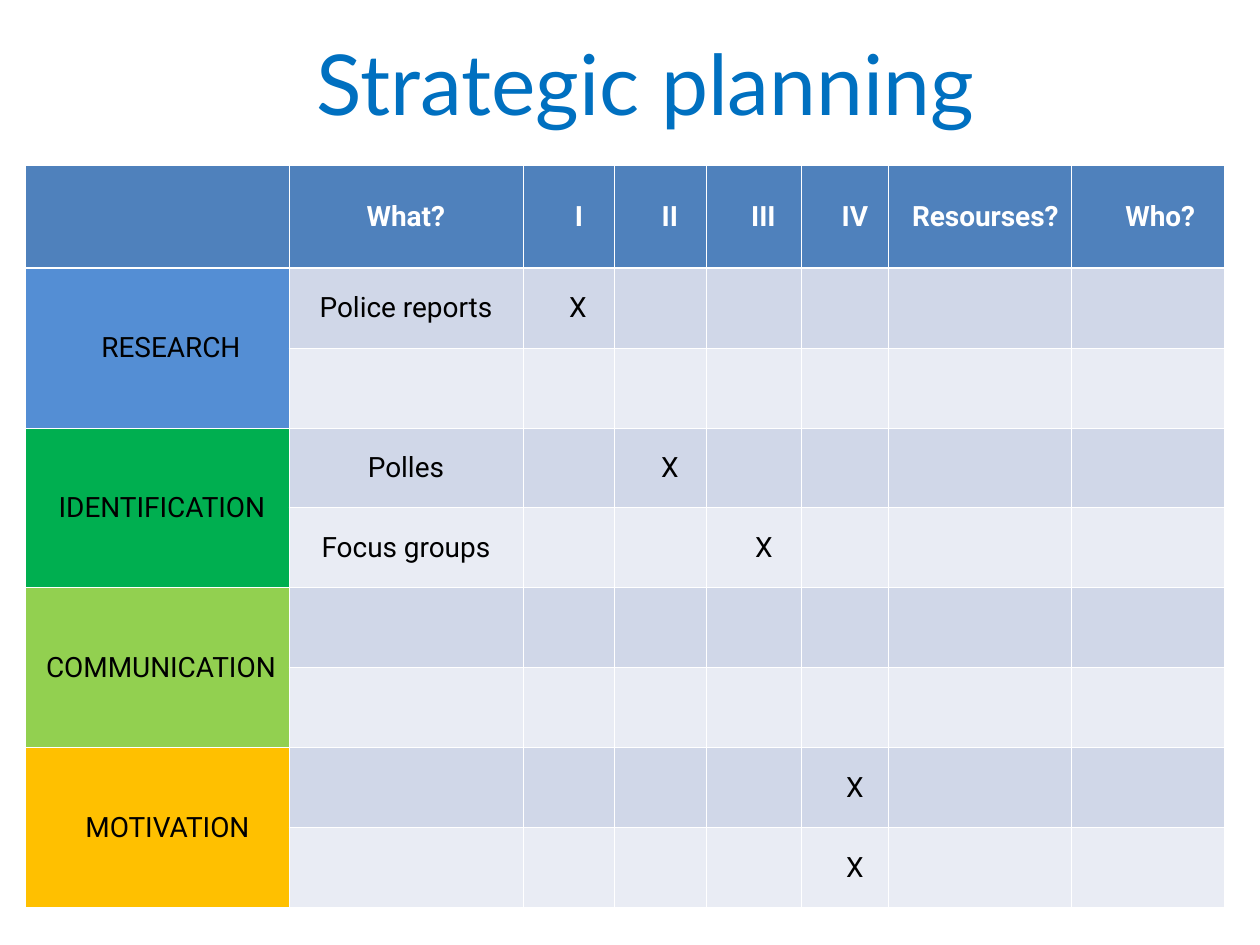
from lxml.etree import SubElement
from pptx import Presentation
from pptx.dml.color import RGBColor
from pptx.enum.text import MSO_ANCHOR as Anchor, PP_ALIGN as Align
from pptx.oxml.ns import qn
from pptx.util import Pt

EMU_PER_PX = 914400 / 126
COLORS = {
    "title": "0070C0", "header": "4F81BC", "white": "FFFFFF", "black": "000000",
    "band_dark": "D0D7E8", "band_light": "E9ECF4",
    "research": "548ED4", "identification": "00AF50",
    "communication": "92D050", "motivation": "FFC000",
}
COLUMN_WIDTHS = [264, 234, 91, 92, 95, 88, 183, 153]
HEADER_HEIGHT, ROW_HEIGHT = 103, 80
# Texts come with the left indent that shifts them from the cell's centre.
HEADERS = [("", 0), ("What?", 0), ("I", 21), ("II", 20), ("III", 20), ("IV", 20),
           ("Resourses?", 10), ("Who?", 24)]
PHASES = [("RESEARCH", 28), ("IDENTIFICATION", 10), ("COMMUNICATION", 8), ("MOTIVATION", 21)]
ENTRIES = {
    (1, 1): ("Police reports", 0), (1, 2): ("X", 19),
    (3, 1): ("Polles", 0), (3, 3): ("X", 20),
    (4, 1): ("Focus groups", 0), (4, 4): ("X", 21),
    (7, 5): ("X", 20), (8, 5): ("X", 20),
}


def px(length):
    return round(length * EMU_PER_PX)


def write_text(frame, text, font="Roboto", size=16, color="black", bold=False):
    para = frame.paragraphs[0]
    para.alignment = Align.CENTER
    span = para.add_run()
    span.text = text
    span.font.name = font
    span.font.size = Pt(size)
    span.font.bold = bold
    span.font.color.rgb = RGBColor.from_string(COLORS[color])


def add_title(page, text):
    box = page.shapes.add_textbox(px(164), px(25), px(963), px(115))
    box.text_frame.word_wrap = True
    write_text(box.text_frame, text, font="Lato", size=48, color="title")


def set_borders(cell, top=0.5, bottom=0.5):
    properties = cell._tc.get_or_add_tcPr()
    for side, width in (("L", 0.5), ("R", 0.5), ("T", top), ("B", bottom)):
        line = SubElement(properties, qn(f"a:ln{side}"), w=str(Pt(width)))
        fill = SubElement(line, qn("a:solidFill"))
        SubElement(fill, qn("a:srgbClr"), val=COLORS["white"])


def style_cell(cell, fill, text="", indent=0, **text_format):
    cell.margin_left = px(indent)
    cell.margin_right = cell.margin_top = cell.margin_bottom = 0
    cell.vertical_anchor = Anchor.MIDDLE
    cell.fill.solid()
    cell.fill.fore_color.rgb = RGBColor.from_string(COLORS[fill])
    if text:
        write_text(cell.text_frame, text, **text_format)


def add_plan_table(page):
    row_count = 1 + 2 * len(PHASES)
    heights = [HEADER_HEIGHT] + [ROW_HEIGHT] * (row_count - 1)
    table = page.shapes.add_table(
        row_count, len(COLUMN_WIDTHS), px(25), px(165),
        px(sum(COLUMN_WIDTHS)), px(sum(heights))).table
    table.horz_banding = False
    for column, width in zip(table.columns, COLUMN_WIDTHS):
        column.width = px(width)
    for row, height in zip(table.rows, heights):
        row.height = px(height)

    for row in range(row_count):
        for column in range(len(COLUMN_WIDTHS)):
            cell = table.cell(row, column)
            set_borders(cell, top=1.5 if row == 1 else 0.5, bottom=1.5 if row == 0 else 0.5)
            if row == 0:
                text, indent = HEADERS[column]
                style_cell(cell, "header", text, indent, color="white", bold=True)
            elif column == 0:
                phase, indent = PHASES[(row - 1) // 2]
                first = row % 2 == 1
                style_cell(cell, phase.lower(), phase if first else "", indent)
            else:
                text, indent = ENTRIES.get((row, column), ("", 0))
                style_cell(cell, "band_dark" if row % 2 else "band_light", text, indent)

    for row in range(1, row_count, 2):
        table.cell(row, 0).merge(table.cell(row + 1, 0))


def main():
    deck = Presentation()
    deck.slide_width, deck.slide_height = px(1260), px(945)
    page = deck.slides.add_slide(deck.slide_layouts[6])
    add_title(page, "Strategic planning")
    add_plan_table(page)
    deck.save("out.pptx")


if __name__ == "__main__":
    main()
